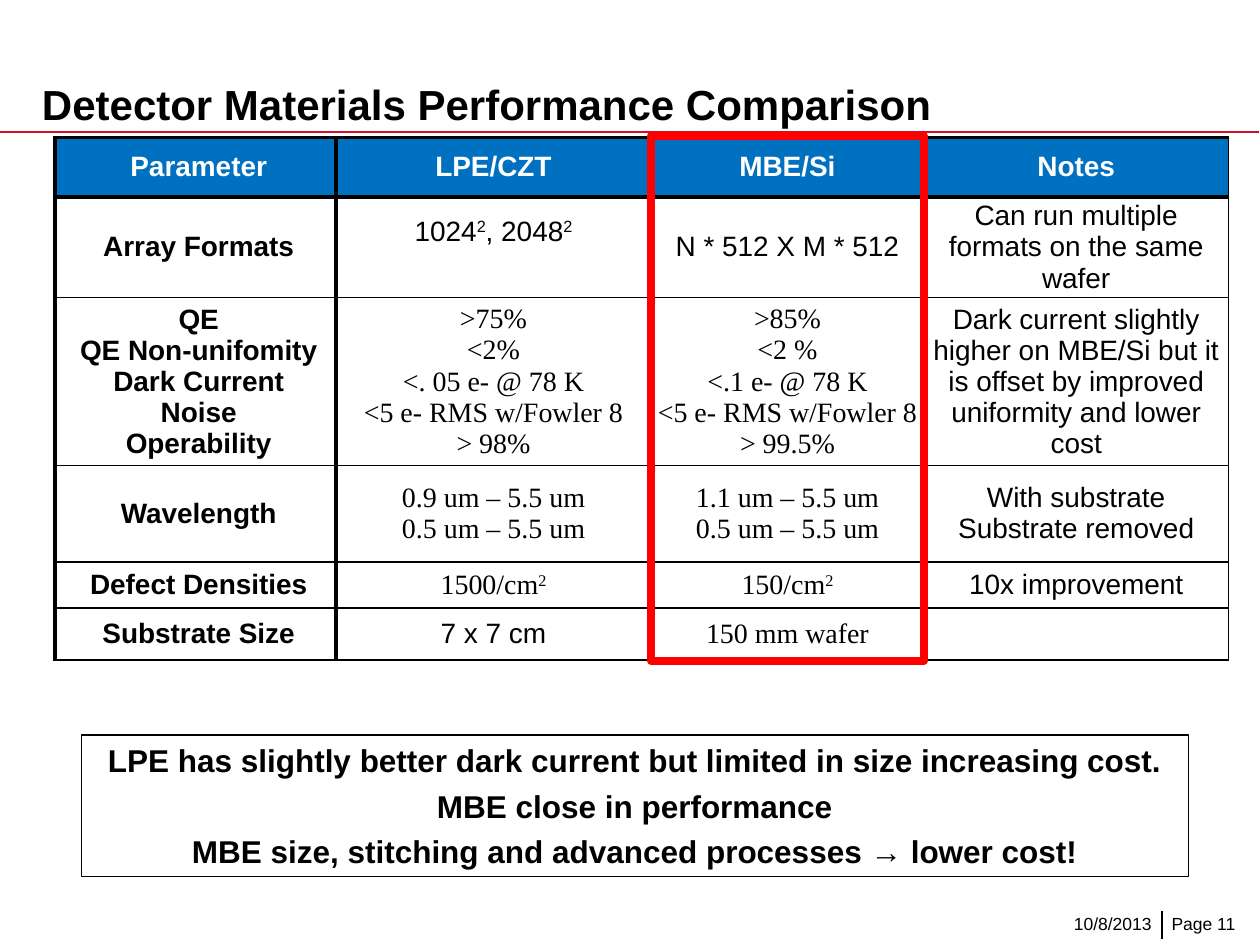
import pptx
import pptx.dml.color
import pptx.enum.shapes
import pptx.enum.text
import pptx.oxml
import pptx.oxml.ns
import pptx.util
from lxml import etree

Pt = pptx.util.Pt
RGBColor = pptx.dml.color.RGBColor
PP_ALIGN = pptx.enum.text.PP_ALIGN
ANCHOR = pptx.enum.text.MSO_ANCHOR
qn = pptx.oxml.ns.qn

BLACK = RGBColor(0x00, 0x00, 0x00)
WHITE = RGBColor(0xFF, 0xFF, 0xFF)
HEADER_BLUE = RGBColor(0x00, 0x70, 0xC0)
RULE_RED = RGBColor(0xCE, 0x11, 0x26)
FRAME_RED = RGBColor(0xFF, 0x00, 0x00)

SANS, SERIF = "Arial", "Times New Roman"
THIN, THICK = 1, 2.25

COL_WIDTHS = [160.5, 180, 156, 174]
ROW_HEIGHTS = [34, 53.5, 89, 55, 26.5, 29.5]

# Line breaks separate paragraphs; text between carets is superscript
ROWS = [
    ["Parameter", "LPE/CZT", "MBE/Si", "Notes"],
    ["Array Formats", "1024^2^, 2048^2", "N * 512 X M * 512",
     "Can run multiple formats on the same wafer"],
    ["QE\nQE Non-unifomity\nDark Current\nNoise\nOperability",
     ">75%\n<2%\n<. 05 e- @ 78 K\n<5 e- RMS w/Fowler 8\n> 98%",
     ">85%\n<2 %\n<.1 e- @ 78 K\n<5 e- RMS w/Fowler 8\n> 99.5%",
     "Dark current slightly higher on MBE/Si but it is offset by "
     "improved uniformity and lower cost"],
    ["Wavelength", "0.9 um – 5.5 um\n0.5 um – 5.5 um",
     "1.1 um – 5.5 um\n0.5 um – 5.5 um", "With substrate\nSubstrate removed"],
    ["Defect Densities", "1500/cm^2", "150/cm^2", "10x improvement"],
    ["Substrate Size", "7 x 7 cm", "150 mm wafer", ""],
]
SERIF_CELLS = {(2, 1), (2, 2), (3, 1), (3, 2), (4, 1), (4, 2), (5, 2)}

CONCLUSIONS = [
    "LPE has slightly better dark current but limited in size increasing cost.",
    "MBE close in performance",
    "MBE size, stitching and advanced processes → lower cost!",
]


def add_run(p, text, size, font=SANS, color=BLACK, bold=False, superscript=False):
    r = p.add_run()
    r.text = text
    r.font.size, r.font.name, r.font.bold = Pt(size), font, bold
    r.font.color.rgb = color
    if superscript:
        r.font._element.set("baseline", "30000")


def add_label(s, box, text, size, bold=False, align=PP_ALIGN.LEFT,
              anchor=ANCHOR.TOP, margin=0):
    tf = s.shapes.add_textbox(*map(Pt, box)).text_frame
    tf.word_wrap = True
    tf.vertical_anchor = anchor
    tf.margin_left = tf.margin_right = 0
    tf.margin_top = tf.margin_bottom = Pt(margin)
    p = tf.paragraphs[0]
    p.alignment = align
    add_run(p, text, size, bold=bold)


def add_line(s, x1, y1, x2, y2, color):
    line = s.shapes.add_connector(
        pptx.enum.shapes.MSO_CONNECTOR.STRAIGHT, Pt(x1), Pt(y1), Pt(x2), Pt(y2))
    line.line.color.rgb = color
    line.line.width = Pt(1)
    etree.SubElement(line._element.spPr, qn("a:effectLst"))


def add_frame(s, box, color, width):
    sp = s.shapes.add_shape(
        pptx.enum.shapes.MSO_SHAPE.RECTANGLE, *map(Pt, box))
    sp.shadow.inherit = False
    sp.fill.background()
    sp.line.color.rgb = color
    sp.line.width = Pt(width)
    return sp


def set_borders(cell, row, col):
    widths = {
        "a:lnL": THICK if col < 2 else THIN,
        "a:lnR": THICK if col == 0 else THIN,
        "a:lnT": THICK if row < 2 else THIN,
        "a:lnB": THICK if row == 0 else THIN,
    }
    tcPr = cell._tc.get_or_add_tcPr()
    for tag, width in widths.items():
        ln = etree.SubElement(tcPr, qn(tag), w=str(Pt(width)))
        fill = etree.SubElement(ln, qn("a:solidFill"))
        etree.SubElement(fill, qn("a:srgbClr"), val=str(BLACK))


def fill_cell(cell, row, col, text):
    header = row == 0
    set_borders(cell, row, col)
    if header:
        cell.fill.solid()
        cell.fill.fore_color.rgb = HEADER_BLUE
    else:
        cell.fill.background()
    cell.vertical_anchor = ANCHOR.MIDDLE
    cell.margin_left = cell.margin_right = Pt(3 if header else 3.6)
    cell.margin_top = cell.margin_bottom = 0
    tf = cell.text_frame
    for i, line in enumerate(text.split("\n")):
        p = tf.add_paragraph() if i else tf.paragraphs[0]
        p.alignment = PP_ALIGN.CENTER
        if col == 0:
            p._p.get_or_add_pPr().set("marL", str(Pt(3.6)))
        for j, part in enumerate(line.split("^")):
            add_run(p, part, 16,
                    font=SERIF if (row, col) in SERIF_CELLS else SANS,
                    color=WHITE if header else BLACK,
                    bold=header or col == 0, superscript=j % 2 == 1)


def add_comparison_table(s, left, top):
    table = s.shapes.add_table(
        len(ROWS), len(COL_WIDTHS), Pt(left), Pt(top),
        Pt(sum(COL_WIDTHS)), Pt(sum(ROW_HEIGHTS))).table
    table.first_row = table.horz_banding = False
    for column, width in zip(table.columns, COL_WIDTHS):
        column.width = Pt(width)
    for i, (height, texts) in enumerate(zip(ROW_HEIGHTS, ROWS)):
        table.rows[i].height = Pt(height)
        for j, text in enumerate(texts):
            fill_cell(table.cell(i, j), i, j, text)
    # The LPE array formats sit above the middle of their cell
    table.cell(1, 1).margin_bottom = Pt(18)


def add_conclusions(s, box):
    tf = add_frame(s, box, BLACK, 0.75).text_frame
    tf.word_wrap = False
    tf.vertical_anchor = ANCHOR.TOP
    for i, text in enumerate(CONCLUSIONS):
        p = tf.add_paragraph() if i else tf.paragraphs[0]
        p.alignment = PP_ALIGN.CENTER
        if i:
            p.space_before = Pt(4.4)
        add_run(p, text, 18, bold=True)


def main():
    prs = pptx.Presentation()
    prs.slide_width, prs.slide_height = Pt(720), Pt(540)
    s = prs.slides.add_slide(prs.slide_layouts[6])

    # Title and rule
    add_line(s, 0, 75.5, 719.5, 75.5, RULE_RED)
    add_label(s, (24, 11.5, 579, 65.5), "Detector Materials Performance Comparison",
              24, bold=True, anchor=ANCHOR.BOTTOM, margin=3.6)

    # Footer
    add_label(s, (564.5, 522, 93.5, 13.5), "10/8/2013", 10, align=PP_ALIGN.RIGHT)
    add_line(s, 664, 520.5, 664, 536.5, BLACK)
    add_label(s, (669.5, 522, 50.5, 13.5), "Page 11", 10)

    # Comparison, conclusions and highlighted MBE/Si column
    add_comparison_table(s, 31.5, 78.5)
    add_conclusions(s, (46.5, 420, 632.5, 81))
    add_frame(s, (372, 77.5, 156, 300), FRAME_RED, 4.5)

    prs.save("out.pptx")


if __name__ == "__main__":
    main()
